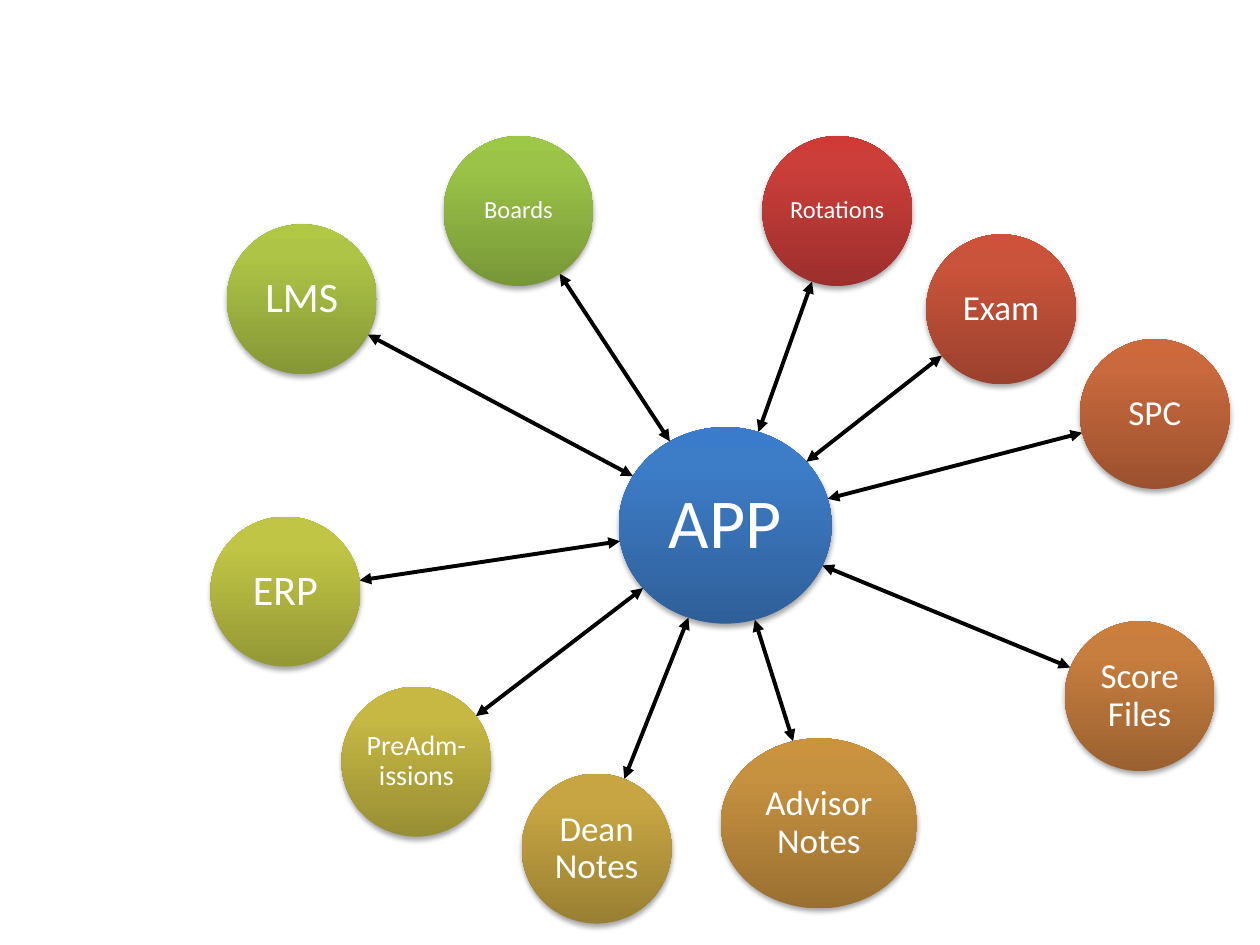
from copy import deepcopy
from math import hypot
from pptx import Presentation
from pptx.dml.color import RGBColor
from pptx.enum.shapes import MSO_CONNECTOR as Link, MSO_SHAPE as Shape
from pptx.enum.text import MSO_ANCHOR as Anchor, PP_ALIGN as Align
from pptx.oxml.ns import qn
from pptx.util import Inches, Pt
from lxml.etree import SubElement

# Content: text, left, top, width, height, text size, inset, gradient from bottom to top
HUB = ("APP", 4.91, 3.39, 1.69, 1.56, 40, 0.03, "2F5F99 3D7CC7 3A7CCB")
D = 1.19
NODES = [
    ("Rotations", 6.05, 1.08, D, D, 14, 0.01, "9C2F2D CB3E3A CE3B37"),
    ("Exam", 7.35, 1.86, D, D, 20, 0.01, "9B412E CA543B CE5239"),
    ("SPC", 8.57, 2.69, D, D, 20, 0.01, "9B512F C9693D CD693B"),
    ("Score Files", 8.45, 4.93, D, D, 20, 0.01, "9A6130 C87E3F CC7E3C"),
    ("Advisor Notes", 5.72, 5.86, 1.56, 1.35, 20, 0.01, "9A7031 C79240 CB933E"),
    ("Dean Notes", 4.14, 6.14, D, D, 20, 0.01, "997F33 C7A542 CAA740"),
    ("PreAdm-issions", 2.71, 5.45, D, D, 16, 0.01, "988E34 C6B843 C9BB41"),
    ("ERP", 1.67, 4.1, D, D, 24, 0.02, "949835 C0C545 C3C843"),
    ("LMS", 1.8, 1.78, D, D, 24, 0.02, "859736 ADC446 B0C844"),
    ("Boards", 3.52, 1.08, D, D, 14, 0.01, "779737 9BC348 9DC746"),
]
STOPS = (0, 0.8, 1)

deck = Presentation()
deck.slide_width, deck.slide_height = Inches(10), Inches(7.5)
slide = deck.slides.add_slide(deck.slide_layouts[6])


def color(code):
    return RGBColor.from_string(code)


def write(shape, text, size, inset, ink="FFFFFF", face="Calibri"):
    frame = shape.text_frame
    frame.word_wrap = True
    frame.vertical_anchor = Anchor.MIDDLE
    frame.margin_left = frame.margin_right = Inches(inset)
    frame.margin_top = frame.margin_bottom = Inches(inset)
    para = frame.paragraphs[0]
    para.alignment, para.line_spacing = Align.CENTER, 0.9
    run = para.add_run()
    run.text = text
    run.font.name, run.font.size = face, Pt(size)
    run.font.color.rgb = color(ink)


def shade(shape, codes):
    fill = shape.fill
    fill.gradient()
    fill.gradient_angle = 90
    stops = shape._element.spPr.find(".//" + qn("a:gsLst"))
    stops.append(deepcopy(stops[0]))
    for stop, place, code in zip(fill.gradient_stops, STOPS, codes.split()):
        stop.position = place
        stop.color.rgb = color(code)


def drop(shape):
    shape.shadow.inherit = False
    effects = shape._element.spPr.find(qn("a:effectLst"))
    outer = SubElement(effects, qn("a:outerShdw"), blurRad=str(Pt(3.1)),
                       dist=str(Pt(1.8)), dir="5400000", rotWithShape="0")
    black = SubElement(outer, qn("a:srgbClr"), val="000000")
    SubElement(black, qn("a:alpha"), val="35000")


def circle(text, left, top, width, height, size, inset, codes):
    shape = slide.shapes.add_shape(Shape.OVAL, *map(Inches, (left, top, width, height)))
    shade(shape, codes)
    shape.line.fill.background()
    drop(shape)
    write(shape, text, size, inset)


def center(node):
    _, left, top, width, height, *_ = node
    return left + width / 2, top + height / 2


def edge(node, other):
    """Point where the line between two centers leaves the node's ellipse."""
    (x, y), (u, v) = center(node), center(other)
    width, height = node[3:5]
    part = 1 / hypot((u - x) / (width / 2), (v - y) / (height / 2))
    return x + (u - x) * part, y + (v - y) * part


def arrow(start, end):
    points = map(Inches, (*edge(start, end), *edge(end, start)))
    line = slide.shapes.add_connector(Link.STRAIGHT, *points)
    line.line.width = Pt(2.25)
    line.line.color.rgb = color("000000")
    for tag in ("a:headEnd", "a:tailEnd"):
        SubElement(line.line._get_or_add_ln(), qn(tag), type="triangle")
    SubElement(line._element.spPr, qn("a:effectLst"))


# Hub, then each node with its arrow
circle(*HUB)
for node in NODES:
    arrow(HUB, node)
    circle(*node)

deck.save("out.pptx")
